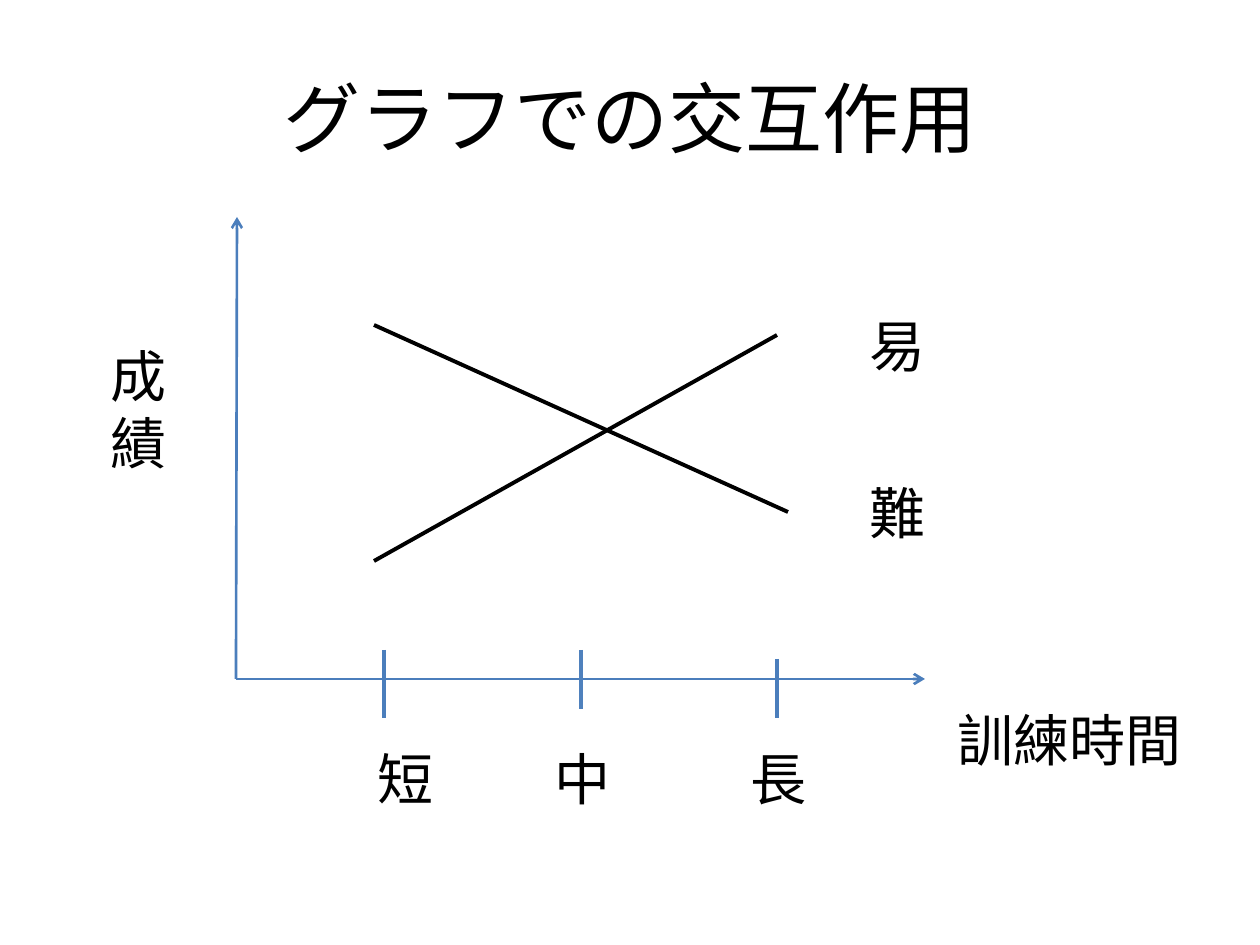
from lxml.etree import SubElement
from pptx import Presentation
from pptx.dml.color import RGBColor
from pptx.enum.shapes import MSO_CONNECTOR
from pptx.enum.text import MSO_ANCHOR, MSO_AUTO_SIZE, PP_ALIGN
from pptx.oxml.ns import qn
from pptx.util import Emu, Pt


def px(n):
    return Emu(round(n * 914400 / 126))


def color(value):
    return RGBColor.from_string(value)


class Deck:
    """Style of the deck and the slide being drawn."""

    font, ink, axis, tick = "Calibri", "000000", "4B7EBC", "4F81BD"

    def __init__(self):
        self.prs = Presentation()
        self.prs.slide_width, self.prs.slide_height = px(1260), px(945)
        self.s = self.prs.slides.add_slide(self.prs.slide_layouts[5])

    def style(self, p, size):
        p.font.name, p.font.size = self.font, Pt(size)
        p.font.color.rgb = color(self.ink)

    def title(self, text, x, y, w, h):
        sp = self.s.shapes.title
        sp.left, sp.top, sp.width, sp.height = map(px, (x, y, w, h))
        tf = sp.text_frame
        tf.text = text
        tf.vertical_anchor = MSO_ANCHOR.MIDDLE
        p = tf.paragraphs[0]
        p.alignment = PP_ALIGN.CENTER
        self.style(p, 44)

    def label(self, text, x, y, w=82, h=81):
        tf = self.s.shapes.add_textbox(*map(px, (x, y, w, h))).text_frame
        tf.word_wrap = False
        tf.auto_size = MSO_AUTO_SIZE.SHAPE_TO_FIT_TEXT
        tf.text = text
        for p in tf.paragraphs:
            self.style(p, 32)

    def line(self, x1, y1, x2, y2, stroke, width=2.25, arrow=False):
        sp = self.s.shapes.add_connector(MSO_CONNECTOR.STRAIGHT, *map(px, (x1, y1, x2, y2)))
        sp.line.color.rgb = color(stroke)
        sp.line.width = Pt(width)
        if arrow:
            SubElement(sp.line._get_or_add_ln(), qn("a:tailEnd"), type="arrow")
        SubElement(sp._element.spPr, qn("a:effectLst"))


def main():
    d = Deck()
    d.title("グラフでの交互作用", 63, 38, 1134, 157)

    for x, y in ((925, 679), (237, 217)):
        d.line(236, 679, x, y, d.axis, 1.5, arrow=True)
    d.label("訓練時間", 945, 699, w=252)
    d.label("成\n績", 98, 335, h=149)

    for text, text_x, x, top, bottom, stroke in (
        ("短", 365, 384, 650, 718, d.axis),
        ("中", 542, 581, 650, 709, d.tick),
        ("長", 738, 777, 659, 718, d.axis),
    ):
        d.line(x, top, x, bottom, stroke)
        d.label(text, text_x, 738)

    for text, text_y, ends in (
        ("易", 305, (374, 561, 777, 335)),
        ("難", 472, (374, 325, 788, 512)),
    ):
        d.line(*ends, d.ink)
        d.label(text, 857, text_y)

    d.prs.save("out.pptx")


if __name__ == "__main__":
    main()
